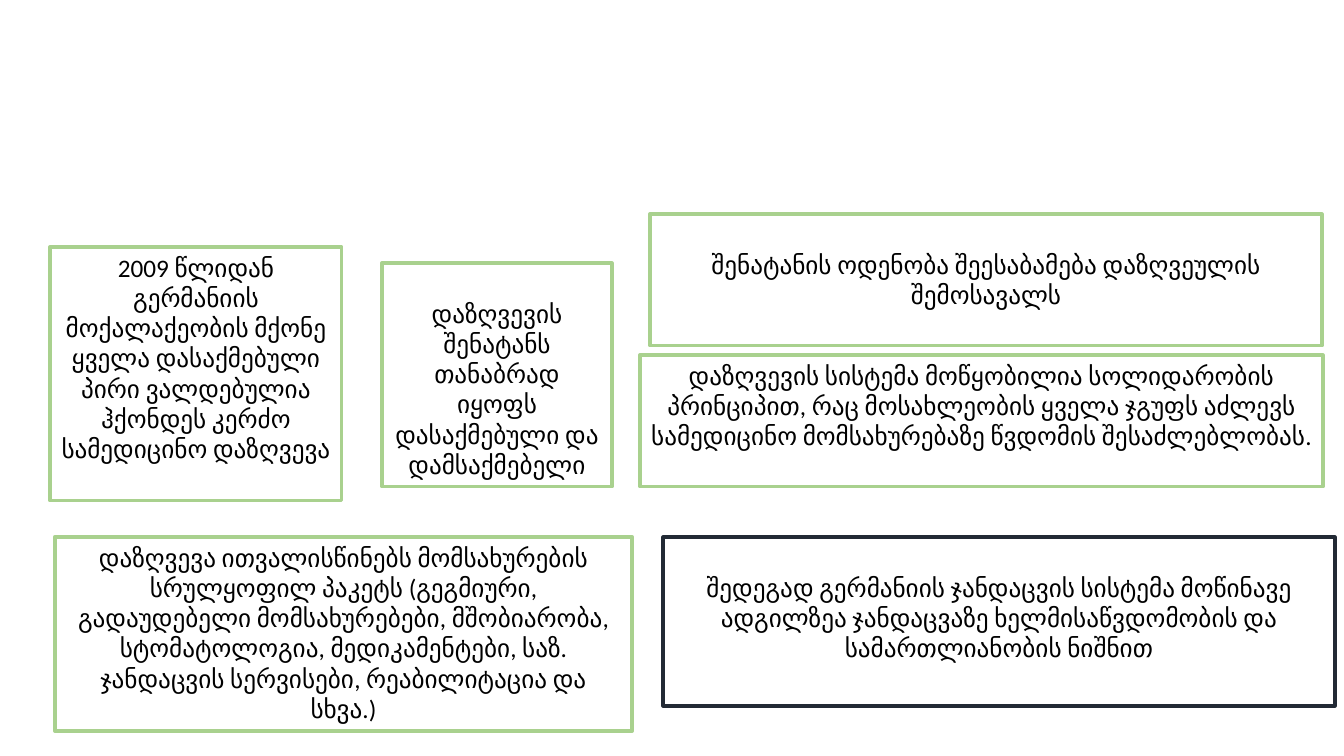
from pptx import Presentation
from pptx.dml.color import RGBColor
from pptx.enum.shapes import MSO_SHAPE
from pptx.enum.text import MSO_ANCHOR, PP_ALIGN
from pptx.util import Emu, Pt

GREEN = RGBColor(0xA9, 0xD1, 0x8E)
NAVY = RGBColor(0x22, 0x2A, 0x35)
BLACK = RGBColor(0, 0, 0)
RECTANGLE = MSO_SHAPE.RECTANGLE
TOP = MSO_ANCHOR.TOP
CENTER = PP_ALIGN.CENTER

SLIDE_SIZE = (1344, 756)
BLANK_LAYOUT = 6
TOP_MARGIN = 5
LOWERED_MARGIN = 35

BOXES = [
    ("2009 წლიდან გერმანიის მოქალაქეობის მქონე ყველა დასაქმებული პირი "
     "ვალდებულია ჰქონდეს კერძო სამედიცინო დაზღვევა",
     (50, 247, 292, 254), GREEN, 2.25, TOP_MARGIN),
    ("დაზღვევის შენატანს თანაბრად იყოფს დასაქმებული და დამსაქმებელი",
     (382, 263, 230, 224), GREEN, 2.25, LOWERED_MARGIN),
    ("შენატანის ოდენობა შეესაბამება დაზღვეულის შემოსავალს",
     (650, 214, 672, 132), GREEN, 2.25, LOWERED_MARGIN),
    ("დაზღვევა ითვალისწინებს მომსახურების სრულყოფილ პაკეტს (გეგმიური, "
     "გადაუდებელი მომსახურებები, მშობიარობა, სტომატოლოგია, მედიკამენტები, "
     "საზ. ჯანდაცვის სერვისები, რეაბილიტაცია და სხვა.)",
     (55, 537, 577, 194), GREEN, 3, TOP_MARGIN),
    ("დაზღვევის სისტემა მოწყობილია სოლიდარობის პრინციპით, რაც მოსახლეობის "
     "ყველა ჯგუფს აძლევს სამედიცინო მომსახურებაზე წვდომის შესაძლებლობას.",
     (640, 355, 683, 132), GREEN, 2.25, TOP_MARGIN),
    ("შედეგად გერმანიის ჯანდაცვის სისტემა მოწინავე ადგილზეა ჯანდაცვაზე "
     "ხელმისაწვდომობის და სამართლიანობის ნიშნით",
     (663, 537, 672, 169), NAVY, 2.25, LOWERED_MARGIN),
]


def px(length):
    return Emu(round(length * 914400 / 100.8))


def add_box(slide, text, bounds, line_color, line_width, top_margin):
    shape = slide.shapes.add_shape(RECTANGLE, *map(px, bounds))
    shape.shadow.inherit = False
    shape.fill.background()
    shape.line.color.rgb = line_color
    shape.line.width = Pt(line_width)
    frame = shape.text_frame
    frame.word_wrap = True
    frame.vertical_anchor = TOP
    frame.margin_top = px(top_margin)
    paragraph = frame.paragraphs[0]
    paragraph.text = text
    paragraph.alignment = CENTER
    paragraph.font.name = "Calibri"
    paragraph.font.size = Pt(18)
    paragraph.font.color.rgb = BLACK


def main():
    presentation = Presentation()
    presentation.slide_width, presentation.slide_height = map(px, SLIDE_SIZE)
    slide = presentation.slides.add_slide(presentation.slide_layouts[BLANK_LAYOUT])
    for box in BOXES:
        add_box(slide, *box)
    presentation.save("out.pptx")


if __name__ == "__main__":
    main()
